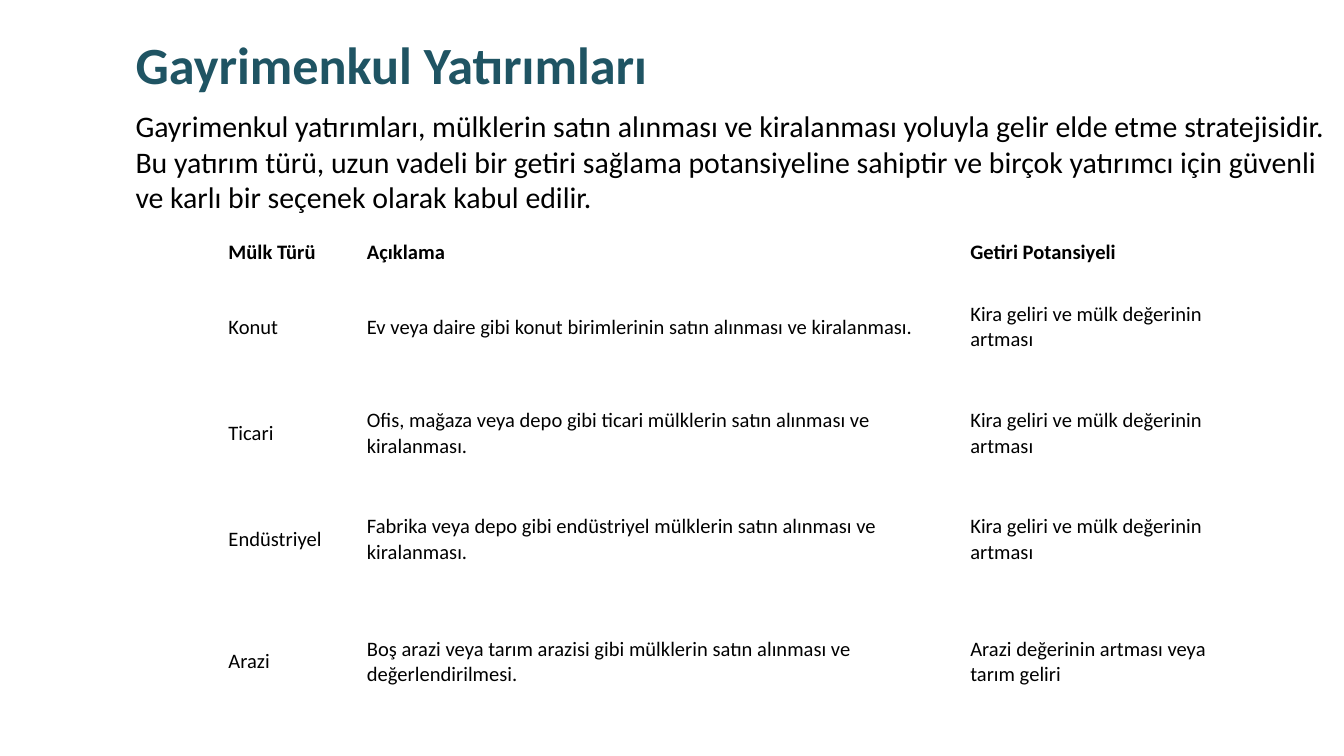
import pptx
import pptx.util
import pptx.dml.color
import pptx.enum.text
from pptx.util import Inches

THEME = {
    "font": "Calibri",
    "title": {"size": 28, "bold": True, "color": "1F5463"},
    "body": {"size": 16, "bold": False, "color": "000000"},
    "header": {"size": 11, "bold": True, "color": "000000"},
    "cell": {"size": 11, "bold": False, "color": "000000"},
}
NO_GRID_STYLE = "{2D5ABB26-0587-4C30-8999-92F81FD0307C}"
W = 10
H = W * 9 / 16
LEFT = 0.91


def write(tf, text, style, **frame):
    for name, value in frame.items():
        setattr(tf, name, value)
    p = tf.paragraphs[0]
    p.alignment = pptx.enum.text.PP_ALIGN.LEFT
    r = p.add_run()
    r.text = text
    look = THEME[style]
    values = {"name": THEME["font"], "size": pptx.util.Pt(look["size"]), "bold": look["bold"]}
    for name, value in values.items():
        setattr(r.font, name, value)
    r.font.color.rgb = pptx.dml.color.RGBColor.from_string(look["color"])


prs = pptx.Presentation()
prs.slide_width, prs.slide_height = Inches(W), Inches(H)
s = prs.slides.add_slide(prs.slide_layouts[5])
frame = {
    "word_wrap": True,
    "auto_size": pptx.enum.text.MSO_AUTO_SIZE.SHAPE_TO_FIT_TEXT,
    "vertical_anchor": pptx.enum.text.MSO_ANCHOR.TOP,
}

# Title
sp = s.shapes.title
place = {"left": LEFT, "top": 0.19, "width": W / 2, "height": 0.57}
for name, value in place.items():
    setattr(sp, name, Inches(value))
write(sp.text_frame, "Gayrimenkul Yatırımları", "title", **frame)

# Introduction, running to the right edge of the slide
sp = s.shapes.add_textbox(Inches(LEFT), Inches(0.75), Inches(W - LEFT), Inches(0.91))
write(
    sp.text_frame,
    "Gayrimenkul yatırımları, mülklerin satın alınması ve kiralanması yoluyla gelir elde "
    "etme stratejisidir. Bu yatırım türü, uzun vadeli bir getiri sağlama potansiyeline "
    "sahiptir ve birçok yatırımcı için güvenli ve karlı bir seçenek olarak kabul edilir.",
    "body",
    **frame,
)

# Property table
rent = "Kira geliri ve mülk değerinin artması"
rows = [
    ("Mülk Türü", "Açıklama", "Getiri Potansiyeli"),
    ("Konut", "Ev veya daire gibi konut birimlerinin satın alınması ve kiralanması.", rent),
    ("Ticari", "Ofis, mağaza veya depo gibi ticari mülklerin satın alınması ve kiralanması.", rent),
    ("Endüstriyel", "Fabrika veya depo gibi endüstriyel mülklerin satın alınması ve kiralanması.", rent),
    ("Arazi", "Boş arazi veya tarım arazisi gibi mülklerin satın alınması ve değerlendirilmesi.",
     "Arazi değerinin artması veya tarım geliri"),
]
col_widths = [1.03, 4.49, 2.15]
row_heights = [0.32] + [0.79] * 3 + [1.03]
sp = s.shapes.add_table(
    len(rows), len(col_widths), Inches(1.62), Inches(1.72),
    Inches(sum(col_widths)), Inches(sum(row_heights)),
)
table = sp.table
table.first_row = table.horz_banding = False
table._tbl.tblPr[0].text = NO_GRID_STYLE
for column, width in zip(table.columns, col_widths):
    column.width = Inches(width)

cell_format = {
    "margin_left": Inches(0.08),
    "margin_right": Inches(0.08),
    "margin_top": Inches(0.04),
    "margin_bottom": Inches(0.04),
    "vertical_anchor": pptx.enum.text.MSO_ANCHOR.MIDDLE,
}
for i, (texts, height) in enumerate(zip(rows, row_heights)):
    table.rows[i].height = Inches(height)
    for j, text in enumerate(texts):
        cell = table.cell(i, j)
        cell.fill.background()
        for name, value in cell_format.items():
            setattr(cell, name, value)
        write(cell.text_frame, text, "cell" if i else "header")

prs.save("out.pptx")
